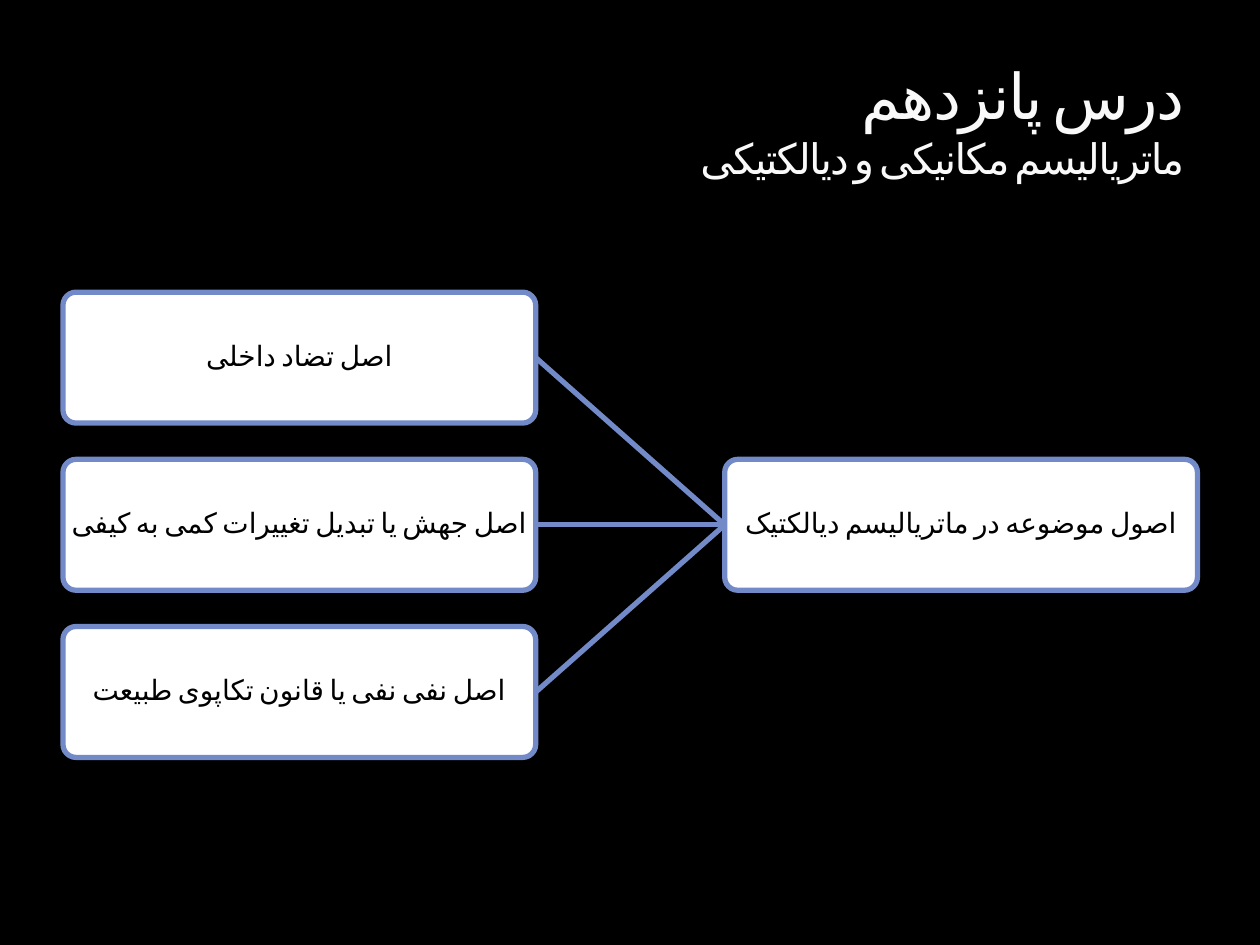
"""Build a slide with a right-to-left tree of three principles."""
from pptx import Presentation
from pptx.dml.color import RGBColor
from pptx.enum import shapes, text
from pptx.oxml import ns
from pptx.util import Cm, Pt
from lxml import etree

FONT = "Vollkorn"
BLACK, WHITE, TITLE, BLUE = "000000", "FFFFFF", "F9F9F9", "738AC8"
BOX_W, BOX_H = 9.53, 2.64
BRANCH_LEFT, ROOT_LEFT = 1.27, 14.61
TOP, STEP = 5.89, 3.37
ROOT = "اصول موضوعه در ماتریالیسم دیالکتیک"
BRANCHES = [
    "اصل تضاد داخلی",
    "اصل جهش یا تبدیل تغییرات کمی به کیفی",
    "اصل نفی نفی یا قانون تکاپوی طبیعت",
]


def rgb(value):
    """Return the colour for a hex string."""
    return RGBColor.from_string(value)


def add_text(p, content, size, color, align, spacing=None):
    """Add a formatted run to a right-to-left paragraph."""
    p.alignment = align
    p._p.get_or_add_pPr().set("rtl", "1")
    r = p.add_run()
    r.text = content
    r.font.size = Pt(size)
    r.font.name = FONT
    r.font.color.rgb = rgb(color)
    rPr = r._r.get_or_add_rPr()
    rPr.set("lang", "fa-IR")
    etree.SubElement(rPr, ns.qn("a:cs"), typeface=FONT)
    if spacing is not None:
        rPr.set("spc", str(spacing))


def set_title(slide):
    """Fill and place the title placeholder."""
    sp = slide.shapes.title
    sp.left, sp.top, sp.width, sp.height = Cm(1.27), Cm(0.43), Cm(22.86), Cm(3.38)
    tf = sp.text_frame
    tf.auto_size = text.MSO_AUTO_SIZE.NONE
    tf.vertical_anchor = text.MSO_ANCHOR.BOTTOM
    p = tf.paragraphs[0]
    add_text(p, "درس پانزدهم", 36, TITLE, text.PP_ALIGN.RIGHT, spacing=-100)
    p.add_line_break()
    add_text(p, "ماتریالیسم مکانیکی و دیالکتیکی", 24, TITLE,
             text.PP_ALIGN.RIGHT, spacing=-100)


def add_box(slide, content, left, top):
    """Add a rounded box with centred text."""
    sp = slide.shapes.add_shape(shapes.MSO_SHAPE.ROUNDED_RECTANGLE,
                                Cm(left), Cm(top), Cm(BOX_W), Cm(BOX_H))
    sp.adjustments[0] = 0.1
    sp.shadow.inherit = False
    sp.fill.solid()
    sp.fill.fore_color.rgb = rgb(WHITE)
    sp.line.color.rgb = rgb(BLUE)
    sp.line.width = Pt(3)
    tf = sp.text_frame
    tf.word_wrap = True
    tf.vertical_anchor = text.MSO_ANCHOR.MIDDLE
    tf.margin_left = tf.margin_right = tf.margin_top = tf.margin_bottom = Cm(0.03)
    p = tf.paragraphs[0]
    p.line_spacing = 0.9
    add_text(p, content, 16, BLACK, text.PP_ALIGN.CENTER)
    return sp


def connect(slide, root, branch):
    """Join the left side of the root to the right side of a branch."""
    line = slide.shapes.add_connector(shapes.MSO_CONNECTOR.STRAIGHT, 0, 0, 0, 0)
    line.begin_connect(root, 1)
    line.end_connect(branch, 3)
    line.line.color.rgb = rgb(BLUE)
    line.line.width = Pt(3)
    etree.SubElement(line._element.spPr, ns.qn("a:effectLst"))


def main():
    """Build and save the slide."""
    prs = Presentation()
    prs.slide_width, prs.slide_height = Cm(25.4), Cm(19.05)
    slide = prs.slides.add_slide(prs.slide_layouts[5])
    slide.background.fill.solid()
    slide.background.fill.fore_color.rgb = rgb(BLACK)
    set_title(slide)
    root = add_box(slide, ROOT, ROOT_LEFT, TOP + STEP)
    for i, content in enumerate(BRANCHES):
        branch = add_box(slide, content, BRANCH_LEFT, TOP + i * STEP)
        connect(slide, root, branch)
    prs.save("out.pptx")


if __name__ == "__main__":
    main()
